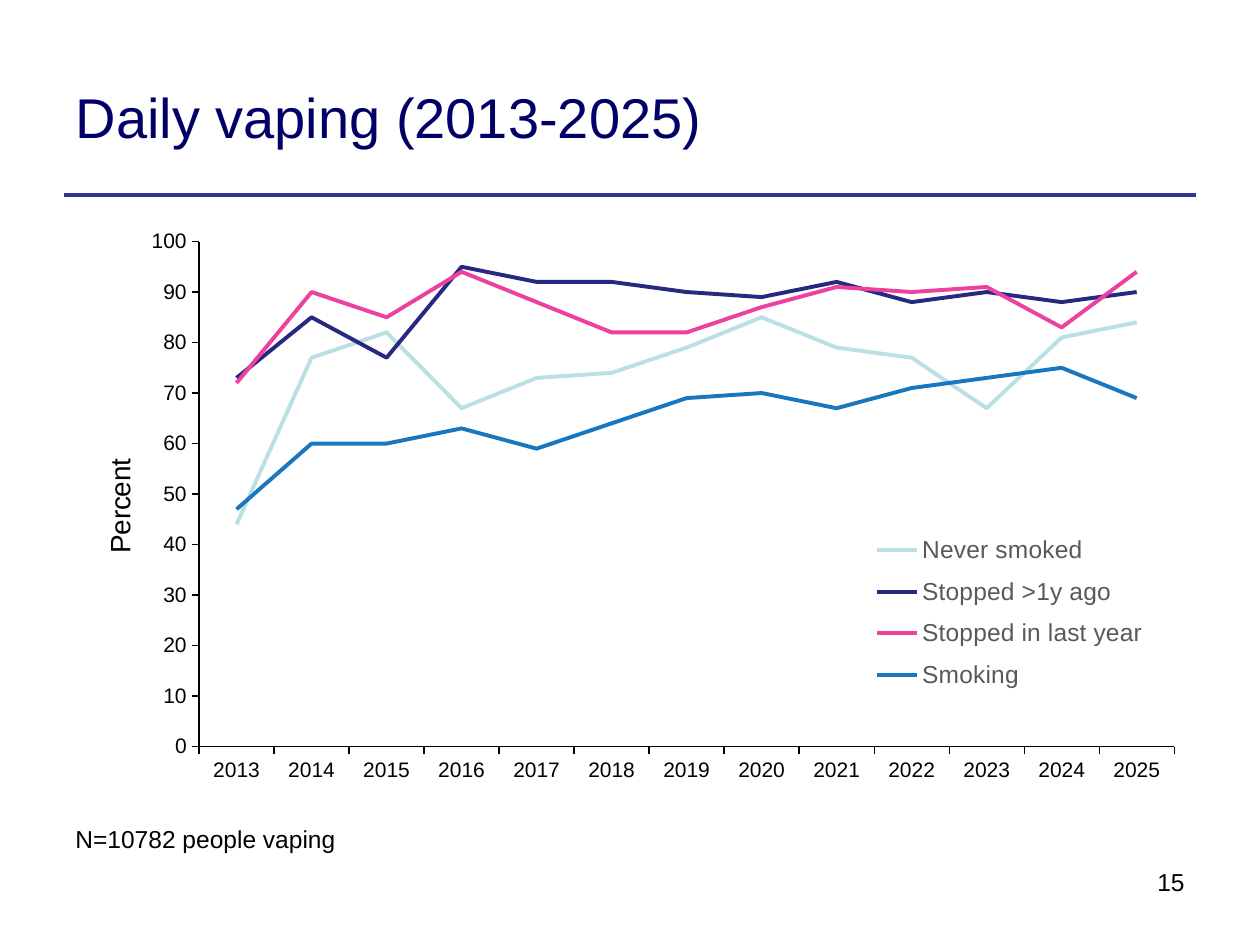
from dataclasses import dataclass

from lxml import etree
from pptx import Presentation
from pptx.chart.data import CategoryChartData
from pptx.dml.color import RGBColor
from pptx.enum import chart as charts, shapes, text
from pptx.oxml import ns
from pptx.util import Pt


@dataclass(frozen=True)
class Theme:
    font: str = "Arial"
    title: str = "000066"
    rule: str = "333399"
    ink: str = "000000"
    legend: str = "595959"
    title_size: int = 32
    axis_title_size: int = 16
    text_size: int = 14
    tick_size: int = 12
    chart_size: int = 10


YEARS = [str(year) for year in range(2013, 2026)]
DAILY_VAPING = [
    ("Never smoked", "BBE0E3", [44, 77, 82, 67, 73, 74, 79, 85, 79, 77, 67, 81, 84]),
    ("Stopped >1y ago", "272880", [73, 85, 77, 95, 92, 92, 90, 89, 92, 88, 90, 88, 90]),
    ("Stopped in last year", "EC419F", [72, 90, 85, 94, 88, 82, 82, 87, 91, 90, 91, 83, 94]),
    ("Smoking", "1977C0", [47, 60, 60, 63, 59, 64, 69, 70, 67, 71, 73, 75, 69]),
]


def apply(target, values):
    for name, value in values.items():
        setattr(target, name, value)


def place_in_chart(parent, index, **layout):
    """Give a chart part a manual layout, in fractions of the chart's size."""
    for old in parent.findall(ns.qn("c:layout")):
        parent.remove(old)
    element = etree.Element(ns.qn("c:layout"))
    manual = etree.SubElement(element, ns.qn("c:manualLayout"))
    for tag, value in layout.items():
        etree.SubElement(manual, ns.qn(f"c:{tag}"), val=str(value))
    parent.insert(index, element)


class SlideBuilder:
    def __init__(self, slide, theme):
        self.slide = slide
        self.theme = theme

    def style_font(self, font, size, color):
        apply(font, {"name": self.theme.font, "size": Pt(size), "bold": False})
        font.color.rgb = RGBColor.from_string(color)

    def style_line(self, line, color, width):
        line.width = Pt(width)
        line.color.rgb = RGBColor.from_string(color)

    def fill_text(self, frame, words, size, color, align):
        paragraph = frame.paragraphs[0]
        paragraph.alignment = align
        span = paragraph.add_run()
        span.text = words
        self.style_font(span.font, size, color)

    def title(self, words, left, top, width, height):
        box = self.slide.shapes.title
        apply(box, {"left": Pt(left), "top": Pt(top),
                    "width": Pt(width), "height": Pt(height)})
        apply(box.text_frame, {"vertical_anchor": text.MSO_ANCHOR.MIDDLE,
                               "word_wrap": True})
        self.fill_text(box.text_frame, words, self.theme.title_size,
                       self.theme.title, text.PP_ALIGN.LEFT)

    def text_box(self, words, left, top, width, height, align=text.PP_ALIGN.LEFT):
        box = self.slide.shapes.add_textbox(Pt(left), Pt(top), Pt(width), Pt(height))
        box.text_frame.word_wrap = True
        self.fill_text(box.text_frame, words, self.theme.text_size, self.theme.ink, align)

    def rule(self, left, right, y):
        line = self.slide.shapes.add_connector(
            shapes.MSO_CONNECTOR.STRAIGHT, Pt(left), Pt(y), Pt(right), Pt(y))
        self.style_line(line.line, self.theme.rule, 2.25)
        etree.SubElement(line._element.spPr, ns.qn("a:effectLst"))

    def line_chart(self, categories, series, axis_title, left, top, width, height):
        data = CategoryChartData(number_format="0")
        data.categories = categories
        for name, _, values in series:
            data.add_series(name, values)
        chart = self.slide.shapes.add_chart(
            charts.XL_CHART_TYPE.LINE, Pt(left), Pt(top), Pt(width), Pt(height), data).chart
        apply(chart, {"has_title": False, "has_legend": True})
        self.style_font(chart.font, self.theme.chart_size, self.theme.ink)
        plot = chart.plots[0]
        plot.vary_by_categories = False
        for line, (_, color, _) in zip(plot.series, series):
            line.smooth = False
            line.marker.style = charts.XL_MARKER_STYLE.NONE
            self.style_line(line.format.line, color, 2.25)
        for axis in (chart.category_axis, chart.value_axis):
            apply(axis, {"has_major_gridlines": False,
                         "major_tick_mark": charts.XL_TICK_MARK.OUTSIDE,
                         "minor_tick_mark": charts.XL_TICK_MARK.NONE})
            self.style_font(axis.tick_labels.font, self.theme.tick_size, self.theme.ink)
            self.style_line(axis.format.line, self.theme.ink, 0.75)
        apply(chart.value_axis, {"minimum_scale": 0, "maximum_scale": 100, "major_unit": 10})
        self.value_title(chart.value_axis.axis_title, axis_title)
        self.legend(chart.legend)
        plot_area = chart._chartSpace.find(".//" + ns.qn("c:plotArea"))
        place_in_chart(plot_area, 0, layoutTarget="inner", xMode="edge", yMode="edge",
                       x=0.12, y=0.04, w=0.86, h=0.81)

    def value_title(self, title, words):
        self.fill_text(title.text_frame, words, self.theme.axis_title_size,
                       self.theme.ink, text.PP_ALIGN.CENTER)
        body = title._element.find(".//" + ns.qn("a:bodyPr"))
        body.set("rot", "-5400000")
        body.set("vert", "horz")
        place_in_chart(title._element, 1, xMode="edge", yMode="edge", x=0.03, y=0.38)

    def legend(self, legend):
        apply(legend, {"position": charts.XL_LEGEND_POSITION.BOTTOM,
                       "include_in_layout": False})
        self.style_font(legend.font, self.theme.text_size, self.theme.legend)
        place_in_chart(legend._element, 1, xMode="edge", yMode="edge",
                       x=0.7, y=0.49, w=0.27, h=0.29)


def main():
    deck = Presentation()
    apply(deck, {"slide_width": Pt(720), "slide_height": Pt(540)})
    page = SlideBuilder(deck.slides.add_slide(deck.slide_layouts[5]), Theme())
    page.rule(36.7, 683.3, 111.6)
    page.title("Daily vaping (2013-2025)", 36, 21.6, 568, 90)
    page.line_chart(YEARS, DAILY_VAPING, "Percent", 36, 123.8, 648, 356.4)
    page.text_box("15", 484.5, 491.8, 199.5, 37.4, text.PP_ALIGN.RIGHT)
    page.text_box("N=10782 people vaping", 36, 467.3, 612.7, 24.5)
    deck.save("out.pptx")


if __name__ == "__main__":
    main()
